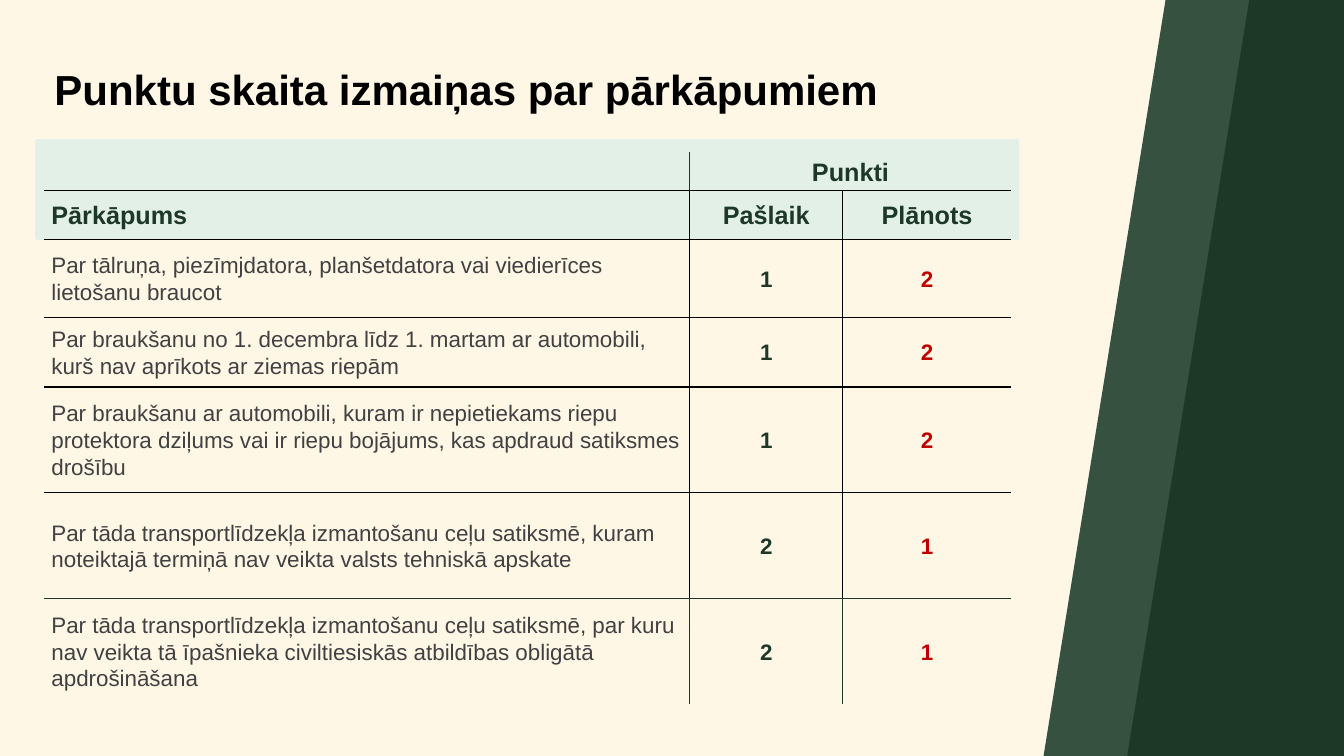
"""Build a slide comparing current and planned penalty points per traffic offence."""
from lxml.etree import SubElement
from pptx import Presentation
from pptx.dml.color import RGBColor
from pptx.enum.shapes import MSO_SHAPE
from pptx.enum.text import MSO_ANCHOR, PP_ALIGN
from pptx.oxml.ns import qn
from pptx.util import Inches, Pt

TITLE = "Punktu skaita izmaiņas par pārkāpumiem"
ROWS = [
    ("", "Punkti", ""),
    ("Pārkāpums", "Pašlaik", "Plānots"),
    ("Par tālruņa, piezīmjdatora, planšetdatora vai viedierīces lietošanu braucot", "1", "2"),
    ("Par braukšanu no 1. decembra līdz 1. martam ar automobili, kurš nav aprīkots "
     "ar ziemas riepām", "1", "2"),
    ("Par braukšanu ar automobili, kuram ir nepietiekams riepu protektora dziļums vai ir "
     "riepu bojājums, kas apdraud satiksmes drošību", "1", "2"),
    ("Par tāda transportlīdzekļa izmantošanu ceļu satiksmē, kuram noteiktajā termiņā nav "
     "veikta valsts tehniskā apskate", "2", "1"),
    ("Par tāda transportlīdzekļa izmantošanu ceļu satiksmē, par kuru nav veikta tā īpašnieka "
     "civiltiesiskās atbildības obligātā apdrošināšana", "2", "1"),
]
HEADER_ROWS = 2
COLUMN_WIDTHS = (6.4, 1.52, 1.67)
ROW_HEIGHTS = (0.38, 0.49, 0.77, 0.69, 1.05, 1.05, 1.05)

BLACK = RGBColor(0x00, 0x00, 0x00)
CREAM = RGBColor(0xFF, 0xF7, 0xE6)
MINT = RGBColor(0xE3, 0xF0, 0xE8)
MOSS = RGBColor(0x36, 0x51, 0x40)
FOREST = RGBColor(0x1E, 0x38, 0x28)
GREY = RGBColor(0x41, 0x41, 0x42)
RED = RGBColor(0xC0, 0x00, 0x00)

PAGE_WIDTH, PAGE_HEIGHT = 13.33, 7.5
LEFT = 0.44
STRIPE_LEAN = 1.21
STRIPES = ((11.56, MOSS), (12.39, FOREST))
COLUMN_COLORS = (GREY, FOREST, RED)


def set_values(target, values):
    for name, value in values.items():
        setattr(target, name, value)


def paint(shape, color):
    shape.shadow.inherit = False
    shape.fill.solid()
    shape.fill.fore_color.rgb = color
    shape.line.fill.background()


def add_stripe(page, top_left, color):
    builder = page.shapes.build_freeform(Inches(top_left), 0)
    corners = [(top_left - STRIPE_LEAN, PAGE_HEIGHT), (PAGE_WIDTH, PAGE_HEIGHT), (PAGE_WIDTH, 0)]
    builder.add_line_segments([(Inches(x), Inches(y)) for x, y in corners])
    paint(builder.convert_to_shape(), color)


def add_title(page):
    title = page.shapes.title
    set_values(title, {"left": Inches(LEFT), "top": Inches(0.64),
                       "width": Inches(10.34), "height": Inches(1.15)})
    set_values(title.text_frame, {"text": TITLE, "word_wrap": True,
                                  "vertical_anchor": MSO_ANCHOR.TOP})
    para = title.text_frame.paragraphs[0]
    set_values(para, {"alignment": PP_ALIGN.LEFT, "line_spacing": 0.9})
    set_values(para.font, {"name": "Arial", "size": Pt(30), "bold": True})
    para.font.color.rgb = BLACK


def draw_borders(cell, colors):
    properties = cell._tc.get_or_add_tcPr()
    for side, color in colors.items():
        line = SubElement(properties, qn(f"a:ln{side}"), w=str(Pt(1)))
        if color is None:
            SubElement(line, qn("a:noFill"))
        else:
            fill = SubElement(line, qn("a:solidFill"))
            SubElement(fill, qn("a:srgbClr"), val=str(color))


def border_colors(row, column):
    last_row, last_column = len(ROWS) - 1, len(COLUMN_WIDTHS) - 1
    upright = FOREST if row in (0, last_row) else BLACK
    merged = row == 0
    return {
        "L": None if column == 0 or (merged and column == 2) else upright,
        "R": None if column == last_column or (merged and column == 1) else upright,
        "T": None if row == 0 else FOREST if row == last_row else BLACK,
        "B": None if row == last_row else FOREST if row == last_row - 1 else BLACK,
    }


def fill_cell(cell, text, row, column):
    header = row < HEADER_ROWS
    draw_borders(cell, border_colors(row, column))
    cell.fill.background()
    set_values(cell, {"margin_left": Inches(0.07), "margin_right": Inches(0.07),
                      "margin_top": 0, "margin_bottom": 0,
                      "vertical_anchor": MSO_ANCHOR.MIDDLE})
    if not text:
        return
    para = cell.text_frame.paragraphs[0]
    set_values(para, {"alignment": PP_ALIGN.CENTER if column else PP_ALIGN.LEFT,
                      "line_spacing": 1.07, "space_after": Pt(8)})
    span = para.add_run()
    span.text = text
    set_values(span.font, {"name": "Arial", "size": Pt(18 if header else 16),
                           "bold": header or column > 0})
    span.font.color.rgb = FOREST if header else COLUMN_COLORS[column]


def add_points_table(page):
    frame = page.shapes.add_table(len(ROWS), len(COLUMN_WIDTHS), Inches(LEFT), Inches(1.51),
                                  Inches(sum(COLUMN_WIDTHS)), Inches(sum(ROW_HEIGHTS)))
    table = frame.table
    set_values(table, {"first_row": False, "horz_banding": False})
    for column, width in zip(table.columns, COLUMN_WIDTHS):
        column.width = Inches(width)
    for row, height in zip(table.rows, ROW_HEIGHTS):
        row.height = Inches(height)
    for row, texts in enumerate(ROWS):
        for column, text in enumerate(texts):
            fill_cell(table.cell(row, column), text, row, column)
    table.cell(0, 1).merge(table.cell(0, 2))


def main():
    deck = Presentation()
    deck.slide_width, deck.slide_height = Inches(PAGE_WIDTH), Inches(PAGE_HEIGHT)
    page = deck.slides.add_slide(deck.slide_layouts[5])
    page.background.fill.solid()
    page.background.fill.fore_color.rgb = CREAM
    for top_left, color in STRIPES:
        add_stripe(page, top_left, color)
    band = page.shapes.add_shape(MSO_SHAPE.ROUNDED_RECTANGLE, Inches(0.35), Inches(1.38),
                                 Inches(9.76), Inches(1))
    band.adjustments[0] = 0.02
    paint(band, MINT)
    add_points_table(page)
    add_title(page)
    deck.save("out.pptx")


if __name__ == "__main__":
    main()
